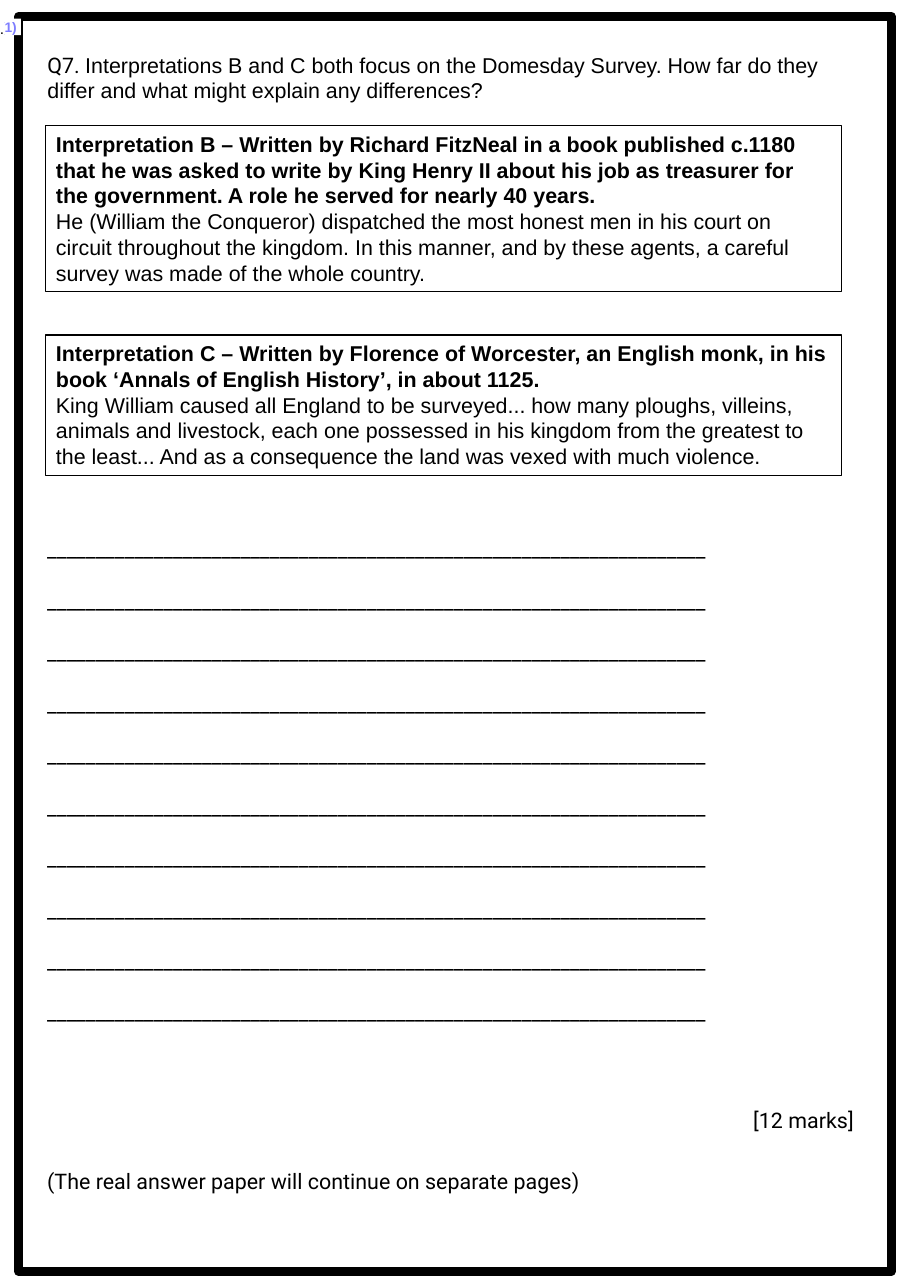
"""Build a history exam answer page comparing two interpretations of the Domesday Survey."""
from dataclasses import dataclass

from pptx import Presentation
from pptx.dml.color import RGBColor
from pptx.enum.shapes import MSO_SHAPE
from pptx.enum.text import MSO_ANCHOR, MSO_AUTO_SIZE, PP_ALIGN
from pptx.util import Inches, Pt

RECTANGLE = MSO_SHAPE.RECTANGLE
TOP, MIDDLE = MSO_ANCHOR.TOP, MSO_ANCHOR.MIDDLE
LEFT, RIGHT = PP_ALIGN.LEFT, PP_ALIGN.RIGHT
NO_AUTOFIT = MSO_AUTO_SIZE.NONE
BLACK, WHITE, LILAC = "000000", "FFFFFF", "7D7DFF"
ARIAL, ROBOTO = "Arial", "Roboto"
TEXT_SIZE, LINE_PITCH = 14, 16.8
ANSWER_LINES, ANSWER_RULE = 10, "_" * 68
TITLE_ONLY_LAYOUT = 5


@dataclass(frozen=True)
class Area:
    left: float
    top: float
    width: float
    height: float


@dataclass(frozen=True)
class Interpretation:
    area: Area
    heading: str
    extract: str


@dataclass(frozen=True)
class Tag:
    area: Area
    text: str
    size: float
    color: str
    bold: bool


@dataclass(frozen=True)
class Note:
    area: Area
    lines: tuple[str, ...]
    align: PP_ALIGN = LEFT
    gap: float = 0


PAGE_FRAME = Area(0.17, 0.15, 7.92, 11.39)
QUESTION_AREA = Area(0.33, 0.37, 7.52, 0.7)
QUESTION_NUMBER = "Q7. "
QUESTION = (
    "Interpretations B and C both focus on the Domesday Survey. How far do they "
    "differ and what might explain any differences?"
)
INTERPRETATIONS = (
    Interpretation(
        Area(0.41, 1.14, 7.23, 1.51),
        "Interpretation B – Written by Richard FitzNeal in a book published c.1180 "
        "that he was asked to write by King Henry II about his job as treasurer for "
        "the government. A role he served for nearly 40 years.",
        "He (William the Conqueror) dispatched the most honest men in his court on "
        "circuit throughout the kingdom. In this manner, and by these agents, a careful "
        "survey was made of the whole country.",
    ),
    Interpretation(
        Area(0.41, 3.04, 7.23, 1.28),
        "Interpretation C – Written by Florence of Worcester, an English monk, in his "
        "book ‘Annals of English History’, in about 1125.",
        "King William caused all England to be surveyed... how many ploughs, villeins, "
        "animals and livestock, each one possessed in his kingdom from the greatest to "
        "the least... And as a consequence the land was vexed with much violence.",
    ),
)
TAGS = (
    Tag(Area(0, 0.17, 0.19, 0.15), "(1)", 9, LILAC, True),
    Tag(Area(0, 0.17, 0.04, 0.17), ".", 10, BLACK, False),
)
NOTES = (
    Note(Area(0.33, 4.82, 7.52, 4.81), (ANSWER_RULE,) * ANSWER_LINES, gap=LINE_PITCH),
    Note(Area(0.33, 10, 7.52, 0.34), ("[12 marks]",), RIGHT),
    Note(Area(0.33, 10.55, 6.17, 0.34), ("(The real answer paper will continue on separate pages)",)),
)


def rgb(color: str) -> RGBColor:
    """Turn a hex string into a colour."""
    return RGBColor.from_string(color)


def bounds(area: Area) -> tuple:
    """Give an area as left, top, width and height lengths."""
    return tuple(Inches(value) for value in (area.left, area.top, area.width, area.height))


def set_frame(frame, side: float, top: float, anchor: MSO_ANCHOR = TOP) -> None:
    """Set insets, wrapping and anchor of a text frame."""
    frame.auto_size = NO_AUTOFIT
    frame.word_wrap = True
    frame.vertical_anchor = anchor
    frame.margin_left = frame.margin_right = Inches(side)
    frame.margin_top = frame.margin_bottom = Inches(top)


def style(para, name: str | None, size: float = TEXT_SIZE, color: str = BLACK,
          bold: bool = False, align: PP_ALIGN = LEFT) -> None:
    """Set the font and alignment of a paragraph."""
    para.alignment = align
    if name:
        para.font.name = name
    para.font.size = Pt(size)
    para.font.bold = bold
    para.font.color.rgb = rgb(color)


def write_lines(frame, lines: tuple[str, ...]) -> list:
    """Write one evenly spaced paragraph for each line."""
    frame.text = "\n".join(lines)
    for para in frame.paragraphs:
        para.line_spacing = Pt(LINE_PITCH)
    return list(frame.paragraphs)


def add_rectangle(page, area: Area, fill: str | None, line_width: float):
    """Add a rectangle with an optional fill and black outline."""
    box = page.shapes.add_shape(RECTANGLE, *bounds(area))
    box.shadow.inherit = False
    if fill:
        box.fill.solid()
        box.fill.fore_color.rgb = rgb(fill)
    else:
        box.fill.background()
    if line_width:
        box.line.color.rgb = rgb(BLACK)
        box.line.width = Pt(line_width)
    else:
        box.line.fill.background()
    return box


def add_question(page) -> None:
    """Put the question in the title placeholder, in front of the page frame."""
    title = page.shapes.title
    title.element.addprevious(add_rectangle(page, PAGE_FRAME, WHITE, 6).element)
    title.left, title.top, title.width, title.height = bounds(QUESTION_AREA)
    set_frame(title.text_frame, 0.1, 0.1)
    para = title.text_frame.paragraphs[0]
    para.line_spacing = Pt(LINE_PITCH)
    style(para, None)
    for text, name in ((QUESTION_NUMBER, ROBOTO), (QUESTION, ARIAL)):
        span = para.add_run()
        span.text = text
        span.font.name = name


def add_interpretation(page, item: Interpretation) -> None:
    """Add an outlined box with a bold heading and an extract."""
    frame = add_rectangle(page, item.area, None, 0.75).text_frame
    set_frame(frame, 0.1, 0.05)
    heading, extract = write_lines(frame, (item.heading, item.extract))
    style(heading, ARIAL, bold=True)
    style(extract, ARIAL)


def add_tag(page, tag: Tag) -> None:
    """Add a small white label at the page edge."""
    frame = add_rectangle(page, tag.area, WHITE, 0).text_frame
    set_frame(frame, 0, 0, MIDDLE)
    frame.text = tag.text
    style(frame.paragraphs[0], ARIAL, tag.size, tag.color, tag.bold)


def add_note(page, note: Note) -> None:
    """Add a text box whose lines are separated by a fixed gap."""
    frame = page.shapes.add_textbox(*bounds(note.area)).text_frame
    set_frame(frame, 0.1, 0.05)
    for index, para in enumerate(write_lines(frame, note.lines)):
        para.space_before = Pt(note.gap if index else 0)
        style(para, ROBOTO, align=note.align)


def main() -> None:
    """Build and save the page."""
    deck = Presentation()
    deck.slide_width, deck.slide_height = Inches(8.27), Inches(11.69)
    page = deck.slides.add_slide(deck.slide_layouts[TITLE_ONLY_LAYOUT])
    add_question(page)
    for item in INTERPRETATIONS:
        add_interpretation(page, item)
    for tag in TAGS:
        add_tag(page, tag)
    for note in NOTES:
        add_note(page, note)
    deck.save("out.pptx")


if __name__ == "__main__":
    main()
